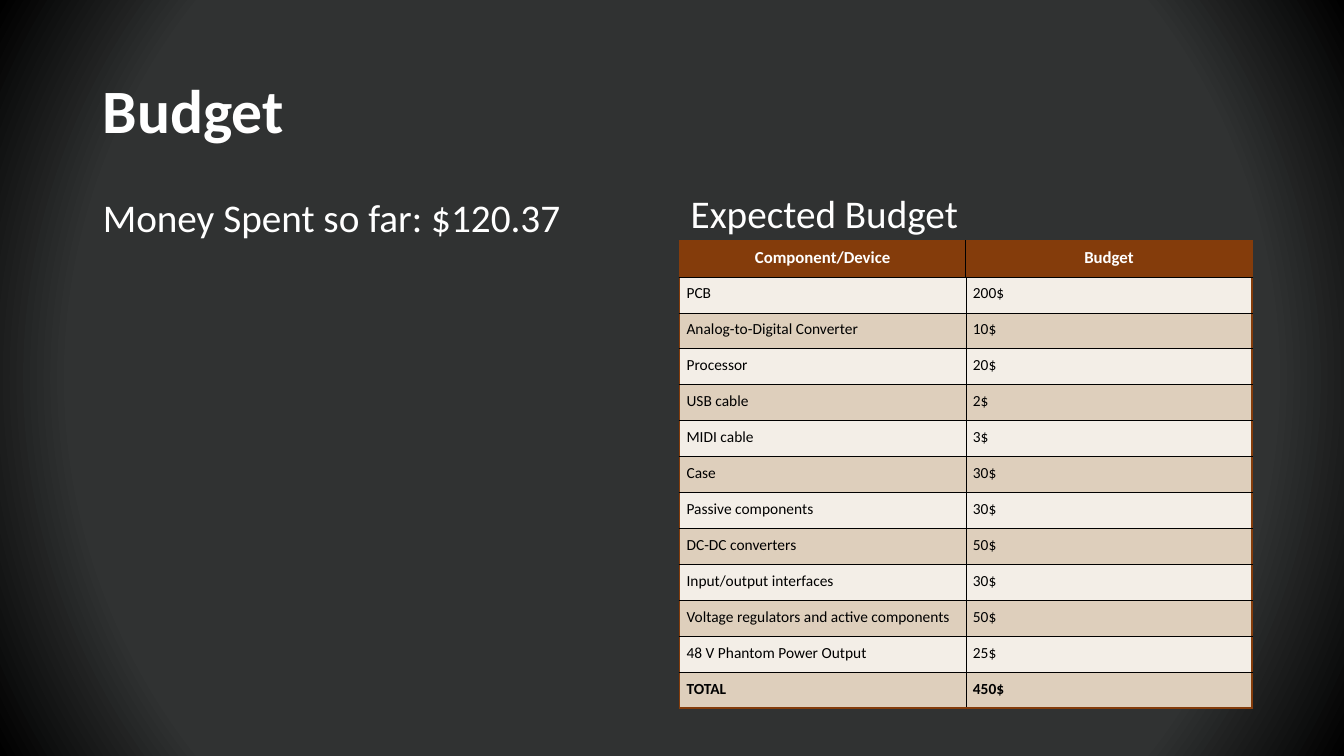
from dataclasses import dataclass

from lxml import etree
from pptx import Presentation
from pptx import util as u
from pptx.dml.color import RGBColor
from pptx.enum import text
from pptx.oxml import parse_xml
from pptx.oxml.ns import nsdecls, qn


@dataclass(frozen=True)
class Theme:
    font: str = "Calibri"
    white: str = "FFFFFF"
    black: str = "000000"
    charcoal: str = "303232"
    rust: str = "843C0B"
    bands: tuple[str, str] = ("F3EEE7", "DECFBC")
    title_size: float = 44
    heading_size: float = 28
    header_size: float = 12
    cell_size: float = 11
    outer_line: float = 1.5
    header_line: float = 0.75
    inner_line: float = 0.5


@dataclass(frozen=True)
class Area:
    left: float
    top: float
    width: float
    height: float

    def box(self) -> tuple[int, int, int, int]:
        return (
            int(SLIDE_WIDTH * self.left / 100),
            int(SLIDE_HEIGHT * self.top / 100),
            int(SLIDE_WIDTH * self.width / 100),
            int(SLIDE_HEIGHT * self.height / 100),
        )


@dataclass(frozen=True)
class Heading:
    idx: int
    words: str
    area: Area
    size: float
    bold: bool
    anchor: text.MSO_ANCHOR
    space_before: float


@dataclass(frozen=True)
class Item:
    component: str
    budget: str


THEME = Theme()
SLIDE_WIDTH, SLIDE_HEIGHT = u.Inches(13.33), u.Inches(7.5)
COMPARISON_LAYOUT = 4
CELL_MARGIN = u.Inches(0.07)

HEADINGS = [
    Heading(0, "Budget", Area(6.9, 5.33, 86.27, 19.33),
            THEME.title_size, True, text.MSO_ANCHOR.MIDDLE, 0),
    Heading(1, "Money Spent so far: $120.37", Area(6.9, 24.67, 42.31, 7.87),
            THEME.heading_size, False, text.MSO_ANCHOR.BOTTOM, 10),
    Heading(3, "Expected Budget", Area(50.64, 24.67, 42.54, 7.33),
            THEME.heading_size, False, text.MSO_ANCHOR.BOTTOM, 10),
]

BUDGET_AREA = Area(50.56, 31.87, 42.61, 61.87)
BUDGET_ITEMS = [
    Item("Component/Device", "Budget"),
    Item("PCB", "200$"),
    Item("Analog-to-Digital Converter", "10$"),
    Item("Processor", "20$"),
    Item("USB cable", "2$"),
    Item("MIDI cable", "3$"),
    Item("Case", "30$"),
    Item("Passive components", "30$"),
    Item("DC-DC converters", "50$"),
    Item("Input/output interfaces", "30$"),
    Item("Voltage regulators and active components", "50$"),
    Item("48 V Phantom Power Output", "25$"),
    Item("TOTAL", "450$"),
]


def set_font(paragraph, size: float, color: str, bold: bool) -> None:
    font = paragraph.font
    font.name, font.size, font.bold = THEME.font, u.Pt(size), bold
    font.color.rgb = RGBColor.from_string(color)


def paint_background(slide) -> None:
    slide.element.cSld.insert(0, parse_xml(
        f'<p:bg {nsdecls("p", "a")}><p:bgPr><a:gradFill rotWithShape="1"><a:gsLst>'
        f'<a:gs pos="78000"><a:srgbClr val="{THEME.charcoal}"/></a:gs>'
        f'<a:gs pos="100000"><a:srgbClr val="{THEME.black}"/></a:gs></a:gsLst>'
        '<a:path path="circle"><a:fillToRect l="50000" t="50000" r="50000" b="50000"/>'
        '</a:path></a:gradFill><a:effectLst/></p:bgPr></p:bg>'))


def write_heading(placeholder, heading: Heading) -> None:
    (placeholder.left, placeholder.top,
     placeholder.width, placeholder.height) = heading.area.box()
    frame = placeholder.text_frame
    frame.text = heading.words
    frame.word_wrap = True
    frame.auto_size = text.MSO_AUTO_SIZE.NONE
    frame.vertical_anchor = heading.anchor
    paragraph = frame.paragraphs[0]
    paragraph.alignment = text.PP_ALIGN.LEFT
    paragraph.line_spacing = 0.9
    paragraph.space_before = u.Pt(heading.space_before)
    set_font(paragraph, heading.size, THEME.white, heading.bold)


def set_borders(cell, row: int, column: int, last_row: int) -> None:
    outer = (THEME.rust, THEME.outer_line)
    inner = (THEME.black, THEME.inner_line)
    divider = (THEME.black, THEME.header_line) if row == 0 else inner
    edges = {
        "a:lnL": outer if column == 0 else divider,
        "a:lnR": divider if column == 0 else outer,
        "a:lnT": outer if row == 0 else inner,
        "a:lnB": outer if row == last_row else inner,
    }
    properties = cell._tc.get_or_add_tcPr()
    for position, (tag, (color, width)) in enumerate(edges.items()):
        line = etree.Element(qn(tag), w=str(u.Pt(width)))
        fill = etree.SubElement(line, qn("a:solidFill"))
        etree.SubElement(fill, qn("a:srgbClr"), val=color)
        properties.insert(position, line)


def write_cell(cell, words: str, row: int, column: int, last_row: int) -> None:
    header = row == 0
    cell.text = words
    cell.margin_left = cell.margin_right = CELL_MARGIN
    cell.margin_top = cell.margin_bottom = CELL_MARGIN
    cell.fill.solid()
    cell.fill.fore_color.rgb = RGBColor.from_string(
        THEME.rust if header else THEME.bands[(row - 1) % 2])
    paragraph = cell.text_frame.paragraphs[0]
    paragraph.alignment = text.PP_ALIGN.CENTER if header else text.PP_ALIGN.LEFT
    set_font(paragraph,
             THEME.header_size if header else THEME.cell_size,
             THEME.white if header else THEME.black,
             row in (0, last_row))
    set_borders(cell, row, column, last_row)


def add_budget(slide, items: list[Item], area: Area) -> None:
    budget = slide.shapes.add_table(len(items), 2, *area.box()).table
    for row, item in enumerate(items):
        for column, words in enumerate((item.component, item.budget)):
            write_cell(budget.cell(row, column), words, row, column, len(items) - 1)


def main() -> None:
    deck = Presentation()
    deck.slide_width, deck.slide_height = SLIDE_WIDTH, SLIDE_HEIGHT
    slide = deck.slides.add_slide(deck.slide_layouts[COMPARISON_LAYOUT])
    paint_background(slide)
    headings = {heading.idx: heading for heading in HEADINGS}
    for placeholder in list(slide.placeholders):
        heading = headings.get(placeholder.placeholder_format.idx)
        if heading:
            write_heading(placeholder, heading)
        else:
            placeholder.element.getparent().remove(placeholder.element)
    add_budget(slide, BUDGET_ITEMS, BUDGET_AREA)
    deck.save("out.pptx")


if __name__ == "__main__":
    main()
